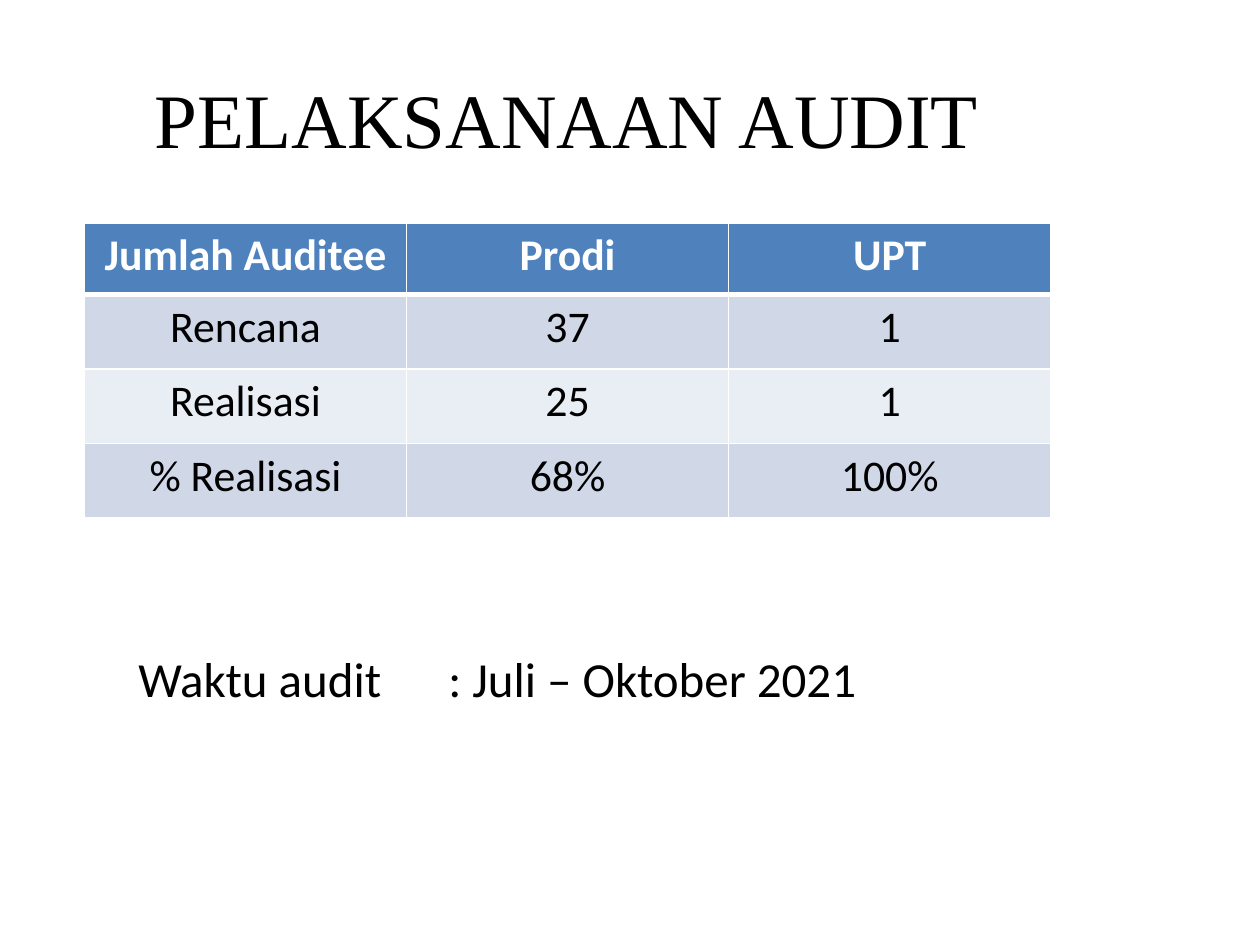
from dataclasses import dataclass

from lxml import etree
from pptx import Presentation
from pptx.dml.color import RGBColor
from pptx.enum.text import MSO_ANCHOR, PP_ALIGN
from pptx.oxml.ns import qn
from pptx.util import Inches, Pt

CENTER, LEFT = PP_ALIGN.CENTER, PP_ALIGN.LEFT
TOP, MIDDLE = MSO_ANCHOR.TOP, MSO_ANCHOR.MIDDLE

WIDTH, HEIGHT = Inches(10), Inches(7.5)
COLORS = {
    "text": "000000",
    "white": "FFFFFF",
    "header": "4F81BD",
    "odd": "D0D8E8",
    "even": "E9EDF4",
}
ROWS = [
    ("Jumlah Auditee", "Prodi", "UPT"),
    ("Rencana", "37", "1"),
    ("Realisasi", "25", "1"),
    ("% Realisasi", "68%", "100%"),
]
HEADER_HEIGHT, ROW_HEIGHT = Inches(0.57), Inches(0.59)
THIN, THICK = Pt(1), Pt(3)


@dataclass
class Area:
    """Left, top, width and height as shares of the slide's size."""
    left: float
    top: float
    width: float
    height: float

    def lengths(self) -> tuple[int, ...]:
        return (int(self.left * WIDTH), int(self.top * HEIGHT),
                int(self.width * WIDTH), int(self.height * HEIGHT))


@dataclass
class Style:
    font: str
    size: float
    color: str = "text"
    bold: bool = False
    align: int = CENTER


@dataclass
class Label:
    text: str
    area: Area
    style: Style
    anchor: int
    tab: float = 0


LABELS = [
    Label("PELAKSANAAN AUDIT", Area(0, 0.04, 0.9, 0.17),
          Style("Times New Roman", 44), MIDDLE),
    Label("Waktu audit\t: Juli – Oktober 2021", Area(0.1, 0.68, 0.9, 0.24),
          Style("Calibri", 28, align=LEFT), TOP, tab=2.46),
]
TABLE_AREA = Area(0.067, 0.236, 0.767, 0.31)


def write(para, text: str, style: Style) -> None:
    para.alignment = style.align
    span = para.add_run()
    span.text = text
    formats = {"name": style.font, "size": Pt(style.size), "bold": style.bold}
    for name, value in formats.items():
        setattr(span.font, name, value)
    span.font.color.rgb = RGBColor.from_string(COLORS[style.color])


def add_tab_stop(para, inches: float) -> None:
    stops = etree.SubElement(para._p.get_or_add_pPr(), qn("a:tabLst"))
    etree.SubElement(stops, qn("a:tab"), pos=str(Inches(inches)), algn="l")


def add_label(page, label: Label) -> None:
    frame = page.shapes.add_textbox(*label.area.lengths()).text_frame
    frame.word_wrap = True
    frame.vertical_anchor = label.anchor
    para = frame.paragraphs[0]
    if label.tab:
        add_tab_stop(para, label.tab)
    write(para, label.text, label.style)


def set_borders(cell, top: int, bottom: int) -> None:
    properties = cell._tc.get_or_add_tcPr()
    widths = {"lnL": THIN, "lnR": THIN, "lnT": top, "lnB": bottom}
    for position, (side, width) in enumerate(widths.items()):
        line = etree.Element(qn(f"a:{side}"), w=str(int(width)))
        fill = etree.SubElement(line, qn("a:solidFill"))
        etree.SubElement(fill, qn("a:srgbClr"), val=COLORS["white"])
        properties.insert(position, line)


def add_audit_table(page, area: Area) -> None:
    table = page.shapes.add_table(
        len(ROWS), len(ROWS[0]), *area.lengths()).table
    for row_index, values in enumerate(ROWS):
        is_header = row_index == 0
        table.rows[row_index].height = HEADER_HEIGHT if is_header else ROW_HEIGHT
        band = "header" if is_header else ("even", "odd")[row_index % 2]
        style = Style("Calibri", 25, "white" if is_header else "text", is_header)
        for column, value in enumerate(values):
            cell = table.cell(row_index, column)
            cell.fill.solid()
            cell.fill.fore_color.rgb = RGBColor.from_string(COLORS[band])
            set_borders(cell, THICK if row_index == 1 else THIN,
                        THICK if is_header else THIN)
            write(cell.text_frame.paragraphs[0], value, style)


def main() -> None:
    deck = Presentation()
    deck.slide_width, deck.slide_height = WIDTH, HEIGHT
    page = deck.slides.add_slide(deck.slide_layouts[6])
    # Title and audit period
    for label in LABELS:
        add_label(page, label)
    # Planned and completed audits
    add_audit_table(page, TABLE_AREA)
    deck.save("out.pptx")


if __name__ == "__main__":
    main()
